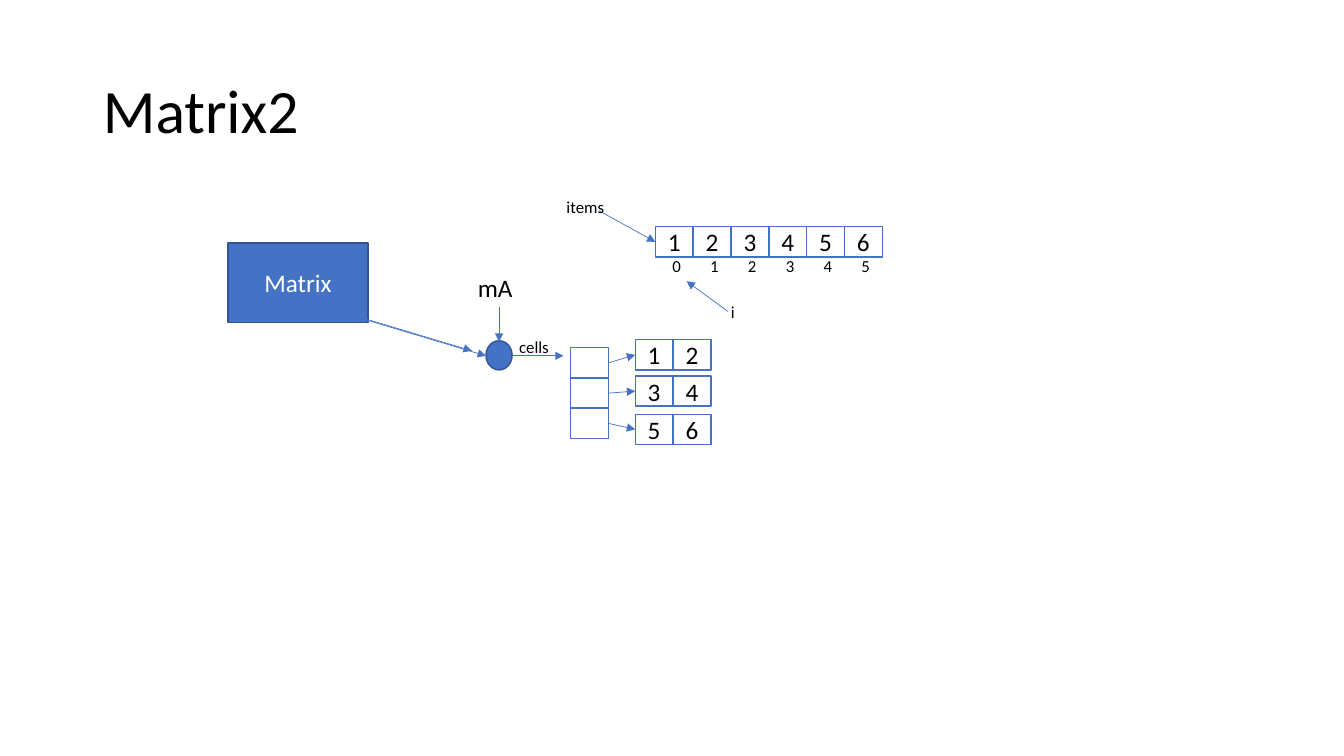
"""Build a slide showing how a matrix stores its items as rows of cells."""
from lxml import etree
from pptx import Presentation
from pptx.dml.color import RGBColor
from pptx.enum.shapes import MSO_CONNECTOR, MSO_SHAPE
from pptx.enum.text import MSO_ANCHOR, PP_ALIGN
from pptx.oxml.ns import qn
from pptx.util import Inches, Pt

RECTANGLE, OVAL = MSO_SHAPE.RECTANGLE, MSO_SHAPE.OVAL
STRAIGHT = MSO_CONNECTOR.STRAIGHT
CENTER, LEFT = PP_ALIGN.CENTER, PP_ALIGN.LEFT
MIDDLE = MSO_ANCHOR.MIDDLE
BLACK = RGBColor(0, 0, 0)
WHITE = RGBColor(255, 255, 255)
BLUE = RGBColor(0x44, 0x72, 0xC4)
DARK_BLUE = RGBColor(0x32, 0x54, 0x91)
FONT = "Calibri"
LEFT_SIDE, RIGHT_SIDE = 1, 3
CELL_WIDTH, CELL_HEIGHT = 3 / 8, 0.3


def add_box(shapes, kind, left, top, width, height, text="", fill=WHITE, line=BLUE, color=BLACK):
    shape = shapes.add_shape(kind, Inches(left), Inches(top), Inches(width), Inches(height))
    shape.shadow.inherit = False
    shape.fill.solid()
    shape.fill.fore_color.rgb = fill
    shape.line.color.rgb = line
    shape.line.width = Pt(1)
    if text:
        shape.text_frame.text = text
        shape.text_frame.vertical_anchor = MIDDLE
        paragraph = shape.text_frame.paragraphs[0]
        paragraph.alignment = CENTER
        paragraph.font.name = FONT
        paragraph.font.size = Pt(18)
        paragraph.font.color.rgb = color
    return shape


def add_arrow(start, end, source=None, target=None):
    arrow = slide.shapes.add_connector(STRAIGHT, *[Inches(value) for value in start + end])
    if source is not None:
        arrow.begin_connect(source, RIGHT_SIDE)
    if target is not None:
        arrow.end_connect(target, LEFT_SIDE)
    arrow.line.color.rgb = BLUE
    arrow.line.width = Pt(0.5)
    etree.SubElement(arrow.line._get_or_add_ln(), qn("a:tailEnd"), type="triangle")
    etree.SubElement(arrow._element.spPr, qn("a:effectLst"))


presentation = Presentation()
presentation.slide_width = Inches(13.33)
presentation.slide_height = Inches(7.5)
slide = presentation.slides.add_slide(presentation.slide_layouts[5])

title = slide.shapes.title
title.left, title.top = Inches(0.92), Inches(0.4)
title.width, title.height = Inches(11.5), Inches(1.45)
title.text_frame.text = "Matrix2"
title.text_frame.vertical_anchor = MIDDLE
heading = title.text_frame.paragraphs[0]
heading.alignment = LEFT
heading.line_spacing = 0.9
heading.font.name = FONT
heading.font.size = Pt(44)
heading.font.color.rgb = BLACK

add_box(slide.shapes, RECTANGLE, 2.26, 2.41, 1.39, 0.79, "Matrix", BLUE, DARK_BLUE, WHITE)
add_box(slide.shapes, OVAL, 4.82, 3.38, 0.26, 0.29, fill=BLUE, line=DARK_BLUE)

row_heads = []
for left, top, numbers in [
    (6.3, 3.37, "12"),
    (6.3, 3.73, "34"),
    (6.3, 4.11, "56"),
    (6.5, 2.25, "123456"),
]:
    group = slide.shapes.add_group_shape()
    cells = [
        add_box(group.shapes, RECTANGLE, left + column * CELL_WIDTH, top, CELL_WIDTH, CELL_HEIGHT, number)
        for column, number in enumerate(numbers)
    ]
    row_heads.append(cells[0])
*matrix_rows, first_item = row_heads

pointer_group = slide.shapes.add_group_shape()
for index, matrix_row in enumerate(matrix_rows):
    pointer_top = 3.45 + index * CELL_HEIGHT
    pointer = add_box(pointer_group.shapes, RECTANGLE, 5.66, pointer_top, CELL_WIDTH, CELL_HEIGHT)
    add_arrow((6.04, pointer_top), (6.3, pointer_top), pointer, matrix_row)

for start, end in [
    ((4.95, 3.05), (4.95, 3.39)),
    ((5.08, 3.53), (5.59, 3.53)),
    ((3.42, 3.11), (4.82, 3.53)),
    ((3.28, 3.06), (4.68, 3.48)),
    ((7.22, 3.09), (6.81, 2.79)),
]:
    add_arrow(start, end)
add_arrow((5.94, 2.09), (6.5, 2.41), target=first_item)

for text, left, top, width, height, size in [
    ("mA", 4.64, 2.65, 0.61, 0.4, 18),
    ("cells", 5.05, 3.29, 0.61, 0.3, 12),
    ("items", 5.52, 1.9, 0.61, 0.3, 12),
    ("i", 7.15, 2.94, 0.31, 0.3, 12),
    ("0\t1\t2\t3\t4\t5", 6.57, 2.49, 2.19, 0.3, 12),
]:
    label = slide.shapes.add_textbox(Inches(left), Inches(top), Inches(width), Inches(height))
    label.text_frame.word_wrap = True
    label.text_frame.text = text
    paragraph = label.text_frame.paragraphs[0]
    paragraph.font.name = FONT
    paragraph.font.size = Pt(size)
    paragraph.font.color.rgb = BLACK
    if "\t" in text:
        tabs = etree.Element(qn("a:tabLst"))
        for column in range(1, 6):
            etree.SubElement(tabs, qn("a:tab"), pos=str(Inches(column * CELL_WIDTH)), algn="l")
        paragraph._p.get_or_add_pPr().insert(0, tabs)

presentation.save("out.pptx")
